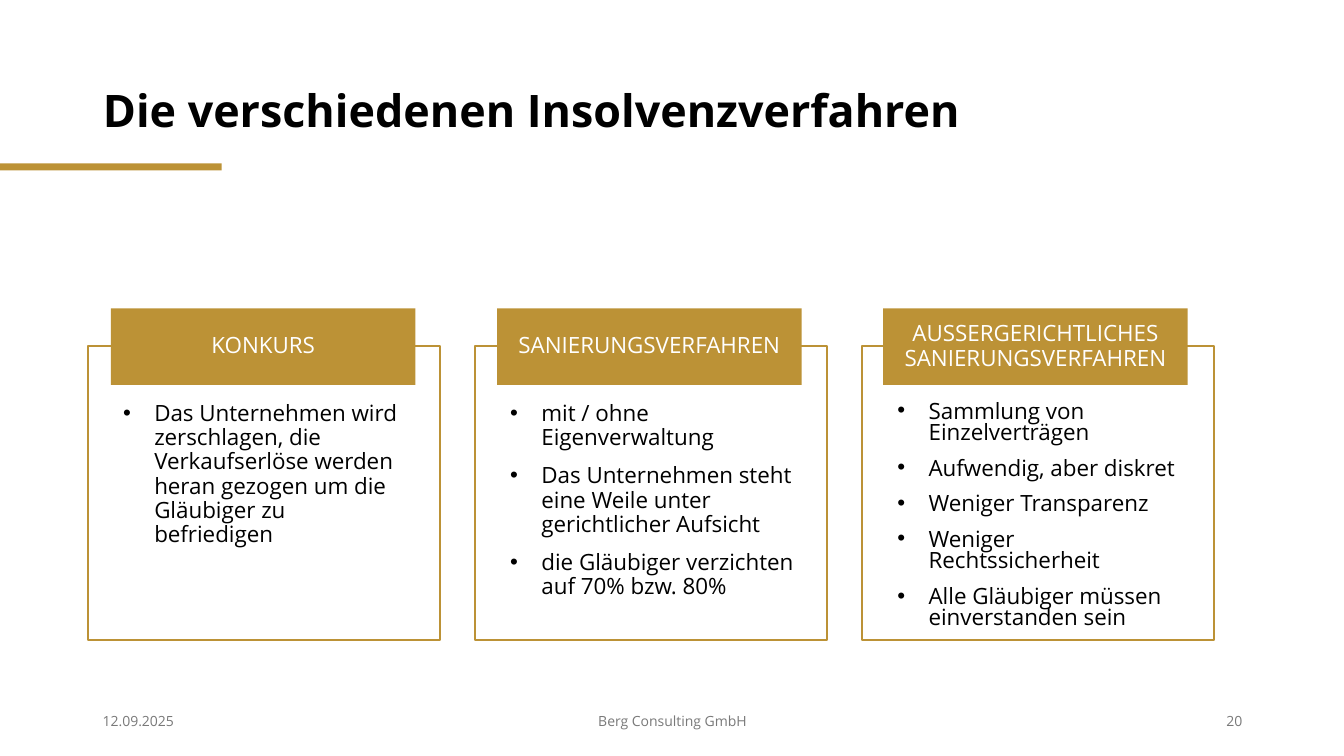
from dataclasses import dataclass

from lxml.etree import SubElement
from pptx import Presentation
from pptx.dml.color import RGBColor
from pptx.enum.shapes import MSO_SHAPE
from pptx.enum.text import MSO_ANCHOR, MSO_AUTO_SIZE, PP_ALIGN
from pptx.oxml.ns import qn
from pptx.shapes.autoshape import Shape
from pptx.slide import Slide
from pptx.text.text import TextFrame, _Paragraph
from pptx.util import Inches, Pt

GOLD = RGBColor(0xBC, 0x92, 0x36)
BLACK = RGBColor(0, 0, 0)
WHITE = RGBColor(0xFF, 0xFF, 0xFF)
GREY = RGBColor(0x79, 0x79, 0x79)
FONT = "Open Sans"
COMPARISON_LAYOUT = 4


@dataclass
class Procedure:
    heading: str
    points: list[str]
    line_spacing: float = 0.9


@dataclass
class FooterItem:
    text: str
    left: float
    width: float
    align: PP_ALIGN


PROCEDURES = [
    Procedure("KONKURS", [
        "Das Unternehmen wird zerschlagen, die Verkaufserlöse werden heran gezogen um die Gläubiger zu befriedigen",
    ]),
    Procedure("SANIERUNGSVERFAHREN", [
        "mit / ohne Eigenverwaltung",
        "Das Unternehmen steht eine Weile unter gerichtlicher Aufsicht",
        "die Gläubiger verzichten auf 70% bzw. 80%",
    ]),
    Procedure("AUSSERGERICHTLICHES SANIERUNGSVERFAHREN", [
        "Sammlung von Einzelverträgen",
        "Aufwendig, aber diskret",
        "Weniger Transparenz",
        "Weniger Rechtssicherheit",
        "Alle Gläubiger müssen einverstanden sein",
    ], 0.8),
]

FOOTER = [
    FooterItem("12.09.2025", 0.92, 3, PP_ALIGN.LEFT),
    FooterItem("Berg Consulting GmbH", 4.42, 4.5, PP_ALIGN.CENTER),
    FooterItem("20", 9.42, 3, PP_ALIGN.RIGHT),
]


def place(sp: Shape, left: float, top: float, width: float, height: float) -> None:
    sp.left, sp.top = Inches(left), Inches(top)
    sp.width, sp.height = Inches(width), Inches(height)


def prepare(tf: TextFrame, anchor: MSO_ANCHOR) -> None:
    tf.word_wrap = True
    tf.auto_size = MSO_AUTO_SIZE.NONE
    tf.vertical_anchor = anchor


def write(p: _Paragraph, text: str, size: float, color: RGBColor,
          align: PP_ALIGN = PP_ALIGN.LEFT, bold: bool = False) -> None:
    p.alignment = align
    r = p.add_run()
    r.text = text
    r.font.name = FONT
    r.font.size = Pt(size)
    r.font.bold = bold
    r.font.color.rgb = color


def add_bullet(p: _Paragraph) -> None:
    pPr = p._p.get_or_add_pPr()
    pPr.set("marL", str(Inches(0.31)))
    pPr.set("indent", str(-Inches(0.31)))
    SubElement(pPr, qn("a:buFont")).set("typeface", "Arial")
    SubElement(pPr, qn("a:buChar")).set("char", "•")


def add_rect(s: Slide, left: float, top: float, width: float, height: float,
             filled: bool) -> Shape:
    sp = s.shapes.add_shape(MSO_SHAPE.RECTANGLE, Inches(left), Inches(top),
                            Inches(width), Inches(height))
    sp.shadow.inherit = False
    if filled:
        sp.fill.solid()
        sp.fill.fore_color.rgb = GOLD
        sp.line.fill.background()
    else:
        sp.fill.background()
        sp.line.color.rgb = GOLD
        sp.line.width = Pt(1.5)
    return sp


def add_title(s: Slide, text: str) -> None:
    title = s.shapes.title
    place(title, 0.92, 0.4, 11.5, 1.45)
    tf = title.text_frame
    prepare(tf, MSO_ANCHOR.MIDDLE)
    p = tf.paragraphs[0]
    write(p, text, 32, BLACK, bold=True)
    p.line_spacing = 0.9


def add_procedure(s: Slide, column: int, procedure: Procedure) -> None:
    add_rect(s, 0.87 + 3.84 * column, 3.43, 3.49, 2.92, filled=False)
    header = add_rect(s, 1.1 + 3.83 * column, 3.06, 3.02, 0.76, filled=True)
    prepare(header.text_frame, MSO_ANCHOR.MIDDLE)
    p = header.text_frame.paragraphs[0]
    write(p, procedure.heading, 16, WHITE, PP_ALIGN.CENTER)
    p.line_spacing = 0.9

    body = s.placeholders[column + 1]
    place(body, 1.12 + 3.84 * column, 3.94, 3.02, 2.5)
    tf = body.text_frame
    prepare(tf, MSO_ANCHOR.TOP)
    for i, point in enumerate(procedure.points):
        p = tf.add_paragraph() if i else tf.paragraphs[0]
        add_bullet(p)
        write(p, point, 16, BLACK)
        p.line_spacing = procedure.line_spacing
        p.space_before = Pt(10 if i else 0)


def add_footer_item(s: Slide, item: FooterItem) -> None:
    sp = s.shapes.add_textbox(Inches(item.left), Inches(6.95),
                              Inches(item.width), Inches(0.4))
    prepare(sp.text_frame, MSO_ANCHOR.MIDDLE)
    write(sp.text_frame.paragraphs[0], item.text, 10, GREY, item.align)


def main() -> None:
    """Build the slide comparing the insolvency procedures."""
    prs = Presentation()
    prs.slide_width, prs.slide_height = Inches(13.33), Inches(7.5)
    s = prs.slides.add_slide(prs.slide_layouts[COMPARISON_LAYOUT])
    add_rect(s, 0, 1.62, 2.2, 0.07, filled=True)
    add_title(s, "Die verschiedenen Insolvenzverfahren")
    for column, procedure in enumerate(PROCEDURES):
        add_procedure(s, column, procedure)
    for item in FOOTER:
        add_footer_item(s, item)
    unused = s.placeholders[4].element
    unused.getparent().remove(unused)
    prs.save("out.pptx")


if __name__ == "__main__":
    main()
